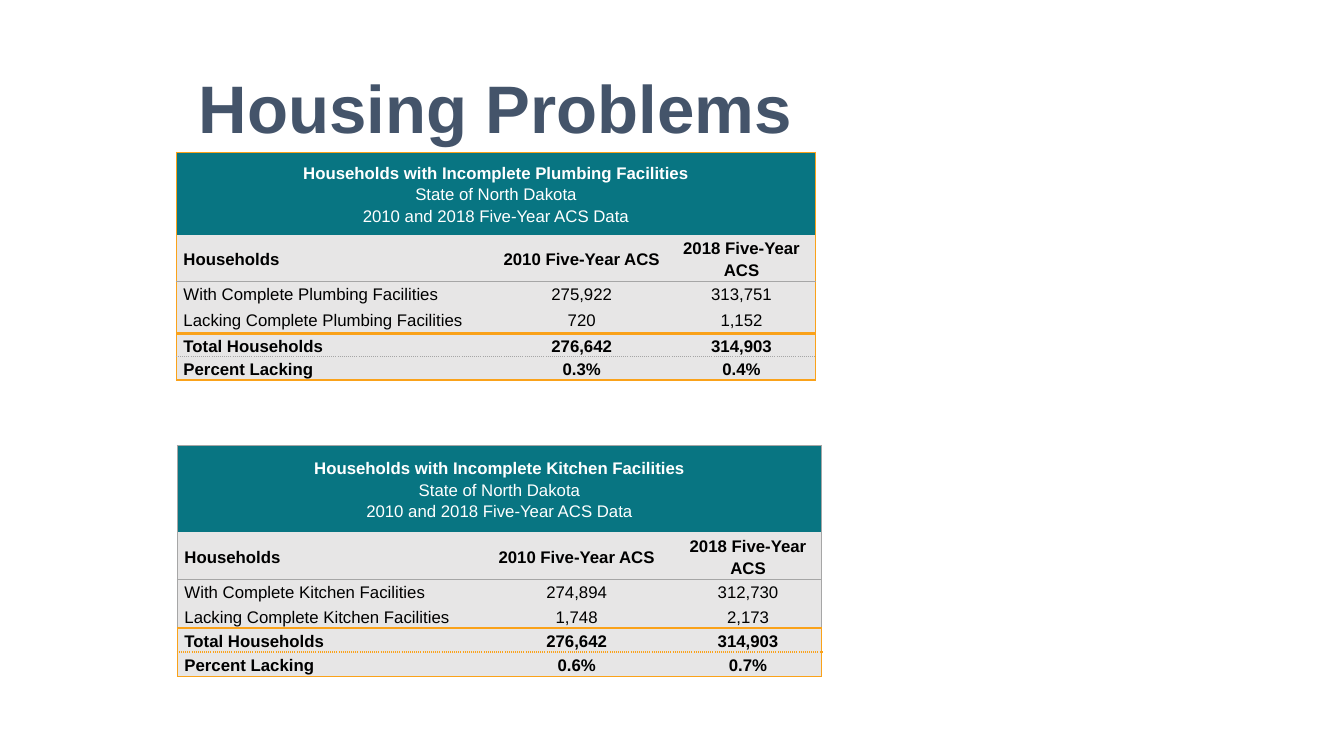
import pptx
import pptx.util
import pptx.dml.color
import pptx.enum.text
import pptx.oxml
import pptx.oxml.ns

Inches, Pt = pptx.util.Inches, pptx.util.Pt
ALIGN = pptx.enum.text.PP_ALIGN
MIDDLE = pptx.enum.text.MSO_ANCHOR.MIDDLE
COLORS = {"title": "44546A", "header": "087582", "body": "E7E6E6", "white": "FFFFFF",
          "black": "000000", "orange": "FAA21A", "grey": "A6A6A6"}


def write(para, text, size, color, bold, align):
    para.alignment = align
    span = para.add_run()
    span.text = text
    for name, value in {"name": "Arial", "size": Pt(size), "bold": bold}.items():
        setattr(span.font, name, value)
    span.font.color.rgb = pptx.dml.color.RGBColor.from_string(COLORS[color])


def set_borders(cell, edges):
    """Draw each edge given as (color, points, dash); clear the others."""
    properties = cell._tc.get_or_add_tcPr()
    for position, side in enumerate("LRTB"):
        color, points, dash = edges.get(side, (None, 1, "solid"))
        paint = (f'<a:solidFill><a:srgbClr val="{COLORS[color]}"/></a:solidFill>'
                 f'<a:prstDash val="{dash}"/>') if color else "<a:noFill/>"
        line = pptx.oxml.parse_xml(
            f'<a:ln{side} {pptx.oxml.ns.nsdecls("a")} w="{Pt(points)}">{paint}</a:ln{side}>')
        properties.insert(position, line)


deck = pptx.Presentation()
deck.slide_width, deck.slide_height = Inches(13.33), Inches(7.5)
page = deck.slides.add_slide(deck.slide_layouts[6])

# Title
box = page.shapes.add_textbox(Inches(0.28), Inches(0.66), Inches(9.27), Inches(0.8))
box.text_frame.word_wrap = True
box.text_frame.vertical_anchor = MIDDLE
write(box.text_frame.paragraphs[0], "Housing Problems", 48, "title", True, ALIGN.CENTER)

# Facility tables; "side" colors the upper outline and "dots" the dotted rule
facilities = [
    {"name": "Plumbing", "at": (1.75, 1.51), "columns": [3.17, 1.7, 1.47],
     "rows": [0.82, 0.45, 0.23, 0.29, 0.23, 0.23], "side": "orange", "dots": "grey",
     "values": [("275,922", "313,751"), ("720", "1,152"),
                ("276,642", "314,903"), ("0.3%", "0.4%")]},
    {"name": "Kitchen", "at": (1.76, 4.42), "columns": [2.99, 1.94, 1.46],
     "rows": [0.86, 0.47, 0.24, 0.24, 0.24, 0.24], "side": "grey", "dots": "orange",
     "values": [("274,894", "312,730"), ("1,748", "2,173"),
                ("276,642", "314,903"), ("0.6%", "0.7%")]},
]

for facility in facilities:
    name, side = facility["name"], facility["side"]
    labels = [f"With Complete {name} Facilities", f"Lacking Complete {name} Facilities",
              "Total Households", "Percent Lacking"]
    heading = [f"Households with Incomplete {name} Facilities",
               "State of North Dakota", "2010 and 2018 Five-Year ACS Data"]
    content = [("\n".join(heading), "", ""),
               ("Households", "2010 Five-Year ACS", "2018 Five-Year ACS")]
    content += [(label, *pair) for label, pair in zip(labels, facility["values"])]

    left, top = facility["at"]
    frame = page.shapes.add_table(
        len(content), 3, Inches(left), Inches(top),
        Inches(sum(facility["columns"])), Inches(sum(facility["rows"])))
    table = frame.table
    table.first_row = table.horz_banding = False
    for column, width in zip(table.columns, facility["columns"]):
        column.width = Inches(width)
    for row, height in zip(table.rows, facility["rows"]):
        row.height = Inches(height)
    table.cell(0, 0).merge(table.cell(0, 2))

    # Horizontal rules, keyed by the row they lie above
    rules = {0: (side, 1, "solid"), 2: ("grey", 1, "solid"), 4: ("orange", 2.25, "solid"),
             5: (facility["dots"], 1, "sysDot"), 6: ("orange", 1, "solid")}

    for r, texts in enumerate(content):
        for c, text in enumerate(texts):
            cell = table.cell(r, c)
            cell.fill.solid()
            cell.fill.fore_color.rgb = pptx.dml.color.RGBColor.from_string(
                COLORS["body" if r else "header"])
            cell.vertical_anchor = MIDDLE
            cell.margin_left = cell.margin_right = Inches(0.07)
            cell.margin_top = cell.margin_bottom = 0

            edges = {}
            if r in rules:
                edges["T"] = rules[r]
            if r + 1 in rules:
                edges["B"] = rules[r + 1]
            outline = ("orange" if r >= 4 else side, 1, "solid")
            if c == 0:
                edges["L"] = outline
            if c == 2 or r == 0 and c == 0:
                edges["R"] = outline
            set_borders(cell, edges)

            if cell.is_spanned:
                continue
            for i, line in enumerate(text.split("\n")):
                para = cell.text_frame.paragraphs[0] if i == 0 else cell.text_frame.add_paragraph()
                para.line_spacing = 1.15
                bold = i == 0 if r == 0 else r in (1, 4, 5)
                write(para, line, 12, "black" if r else "white", bold,
                      ALIGN.LEFT if r and c == 0 else ALIGN.CENTER)

deck.save("out.pptx")
